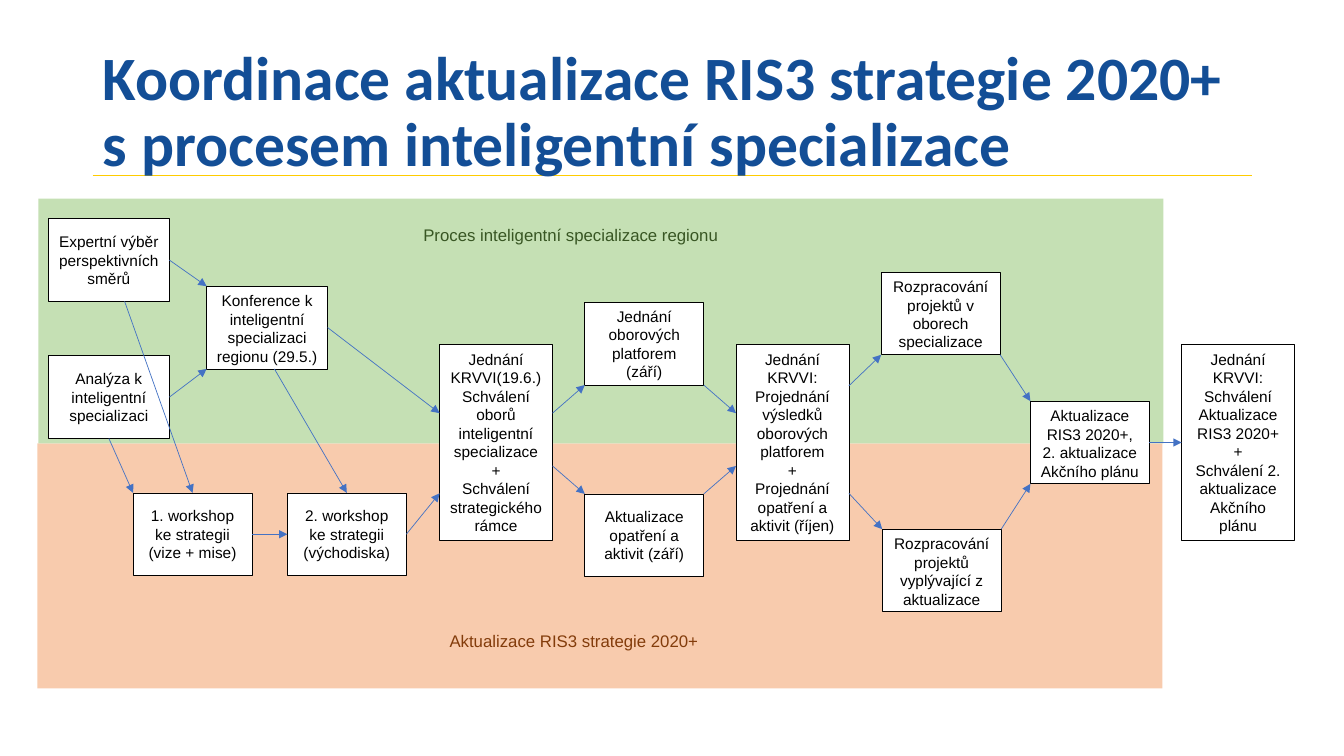
from lxml import etree
from pptx import Presentation
from pptx.dml.color import RGBColor
from pptx.enum.shapes import MSO_CONNECTOR, MSO_SHAPE
from pptx.enum.text import MSO_ANCHOR, PP_ALIGN
from pptx.oxml.ns import qn
from pptx.util import Inches, Pt

RECTANGLE = MSO_SHAPE.RECTANGLE
STRAIGHT = MSO_CONNECTOR.STRAIGHT
TOP, MIDDLE = MSO_ANCHOR.TOP, MSO_ANCHOR.MIDDLE
LEFT, CENTER, JUSTIFY = PP_ALIGN.LEFT, PP_ALIGN.CENTER, PP_ALIGN.JUSTIFY

WHITE = RGBColor(0xFF, 0xFF, 0xFF)
BLACK = RGBColor(0x00, 0x00, 0x00)
TITLE_BLUE = RGBColor(0x13, 0x4E, 0x96)
RULE_YELLOW = RGBColor(0xFF, 0xCC, 0x00)
ARROW_BLUE = RGBColor(0x44, 0x72, 0xC4)
GREEN = RGBColor(0xC5, 0xE0, 0xB4)
ORANGE = RGBColor(0xF8, 0xCB, 0xAD)
DARK_GREEN = RGBColor(0x38, 0x56, 0x23)
DARK_ORANGE = RGBColor(0x83, 0x3C, 0x0B)

TITLE = "Koordinace aktualizace RIS3 strategie 2020+\vs procesem inteligentní specializace"

BANDS = [
    (0.37, 4.4, ORANGE),
    (0.38, 1.97, GREEN),
]
BAND_SIZE = (11.16, 2.43)

LABELS = [
    ("Proces inteligentní specializace regionu", 4.1, 2.15, DARK_GREEN),
    ("Aktualizace RIS3 strategie 2020+", 4.36, 6.18, DARK_ORANGE),
]

INPUT, TASK, MEETING = (1.2, 0.82), (1.18, 0.82), (1.12, 1.94)

STEPS = {
    "experts": (0.48, 2.17, INPUT, MIDDLE, ["Expertní výběr perspektivních směrů"]),
    "analysis": (0.48, 3.53, INPUT, MIDDLE, ["Analýza k inteligentní specializaci"]),
    "conference": (2.05, 2.84, INPUT, TOP,
                   ["Konference k inteligentní specializaci regionu (29.5.)"]),
    "workshop 1": (1.32, 4.89, TASK, MIDDLE, ["1. workshop ke strategii (vize + mise)"]),
    "workshop 2": (2.85, 4.89, TASK, MIDDLE, ["2. workshop ke strategii (východiska)"]),
    "june": (4.36, 3.42, MEETING, TOP,
             ["Jednání KRVVI(19.6.)", "Schválení oborů inteligentní specializace", "+",
              "Schválení strategického rámce"]),
    "platforms": (5.8, 3.0, TASK, MIDDLE, ["Jednání oborových platforem (září)"]),
    "measures": (5.8, 4.9, TASK, MIDDLE, ["Aktualizace opatření a aktivit (září)"]),
    "october": (7.3, 3.42, MEETING, TOP,
                ["Jednání KRVVI:", "Projednání výsledků oborových platforem", "+",
                 "Projednání opatření a aktivit (říjen)"]),
    "field projects": (8.74, 2.7, TASK, TOP,
                       ["Rozpracování projektů v oborech specializace"]),
    "update projects": (8.75, 5.25, TASK, TOP,
                        ["Rozpracování projektů vyplývající z aktualizace"]),
    "update": (10.22, 3.98, TASK, TOP,
               ["Aktualizace RIS3 2020+, 2. aktualizace Akčního plánu"]),
    "approval": (11.72, 3.42, MEETING, TOP,
                 ["Jednání KRVVI:", "Schválení Aktualizace RIS3 2020+", "+",
                  "Schválení 2. aktualizace Akčního plánu"]),
}

TOP_SIDE, LEFT_SIDE, BOTTOM_SIDE, RIGHT_SIDE = (0.5, 0), (0, 0.5), (0.5, 1), (1, 0.5)
SITES = {TOP_SIDE: 0, LEFT_SIDE: 1, BOTTOM_SIDE: 2, RIGHT_SIDE: 3}
TOP_LEFT, TOP_RIGHT, BOTTOM_LEFT, BOTTOM_RIGHT = (0, 0), (1, 0), (0, 1), (1, 1)
UPPER, LOWER = 0.35, 0.62

ARROWS = [
    ("experts", RIGHT_SIDE, "conference", TOP_LEFT),
    ("experts", (0.63, 1), "workshop 1", TOP_SIDE),
    ("analysis", RIGHT_SIDE, "conference", BOTTOM_LEFT),
    ("analysis", BOTTOM_SIDE, "workshop 1", TOP_LEFT),
    ("conference", (0.56, 1), "workshop 2", TOP_SIDE),
    ("conference", RIGHT_SIDE, "june", (0, UPPER)),
    ("workshop 1", RIGHT_SIDE, "workshop 2", LEFT_SIDE),
    ("workshop 2", RIGHT_SIDE, "june", (0, 0.76)),
    ("june", (1, UPPER), "platforms", BOTTOM_LEFT),
    ("june", (1, LOWER), "measures", TOP_LEFT),
    ("platforms", BOTTOM_RIGHT, "october", (0, UPPER)),
    ("measures", TOP_RIGHT, "october", (0, LOWER)),
    ("october", (1, 0.21), "field projects", BOTTOM_LEFT),
    ("october", (1, 0.76), "update projects", TOP_LEFT),
    ("field projects", BOTTOM_RIGHT, "update", TOP_LEFT),
    ("update projects", TOP_RIGHT, "update", BOTTOM_LEFT),
    ("update", RIGHT_SIDE, "approval", LEFT_SIDE),
]


def write(shape, texts, size, color, alignment, anchor=TOP, font="Arial", bold=False, spacing=1.0):
    frame = shape.text_frame
    frame.word_wrap = True
    frame.vertical_anchor = anchor
    frame.text = "\n".join(texts)
    for paragraph in frame.paragraphs:
        paragraph.alignment = alignment
        paragraph.line_spacing = spacing
        paragraph.font.name = font
        paragraph.font.size = Pt(size)
        paragraph.font.bold = bold
        paragraph.font.color.rgb = color


def add_text(slide, area, *texts, **style):
    write(slide.shapes.add_textbox(*map(Inches, area)), texts, **style)


def add_rectangle(slide, left, top, size, fill, line=None):
    shape = slide.shapes.add_shape(RECTANGLE, *map(Inches, (left, top, *size)))
    shape.shadow.inherit = False
    shape.fill.solid()
    shape.fill.fore_color.rgb = fill
    if line is None:
        shape.line.fill.background()
    else:
        shape.line.color.rgb = line
        shape.line.width = Pt(0.5)
    return shape


def add_line(slide, start, end, color, width):
    line = slide.shapes.add_connector(STRAIGHT, *start, *end)
    line.line.color.rgb = color
    line.line.width = Pt(width)
    etree.SubElement(line._element.spPr, qn("a:effectLst"))
    return line


def point_on(shape, share):
    return (int(shape.left + share[0] * shape.width), int(shape.top + share[1] * shape.height))


def add_arrow(slide, source, exit_share, target, entry_share):
    arrow = add_line(slide, point_on(source, exit_share), point_on(target, entry_share),
                     ARROW_BLUE, 0.5)
    etree.SubElement(arrow.line._get_or_add_ln(), qn("a:tailEnd"), type="triangle")
    if exit_share in SITES:
        arrow.begin_connect(source, SITES[exit_share])
    if entry_share in SITES:
        arrow.end_connect(target, SITES[entry_share])


def main():
    presentation = Presentation()
    presentation.slide_width = Inches(13.33)
    presentation.slide_height = Inches(7.5)
    slide = presentation.slides.add_slide(presentation.slide_layouts[6])

    add_line(slide, (Inches(0.92), Inches(1.74)), (Inches(12.42), Inches(1.74)), RULE_YELLOW, 1)
    add_text(slide, (0.92, 0.4, 11.5, 1.45), TITLE, size=44, color=TITLE_BLUE, alignment=LEFT,
             anchor=MIDDLE, font="Calibri", bold=True, spacing=0.9)

    for left, top, color in BANDS:
        add_rectangle(slide, left, top, BAND_SIZE, color)

    boxes = {}
    for name, (left, top, size, anchor, texts) in STEPS.items():
        boxes[name] = add_rectangle(slide, left, top, size, WHITE, BLACK)
        write(boxes[name], texts, 11, BLACK, CENTER, anchor)

    for source, exit_share, target, entry_share in ARROWS:
        add_arrow(slide, boxes[source], exit_share, boxes[target], entry_share)

    for text, left, top, color in LABELS:
        add_text(slide, (left, top, 3.29, 0.47), text, size=12, color=color,
                 alignment=JUSTIFY, spacing=1.15)

    presentation.save("out.pptx")


if __name__ == "__main__":
    main()
